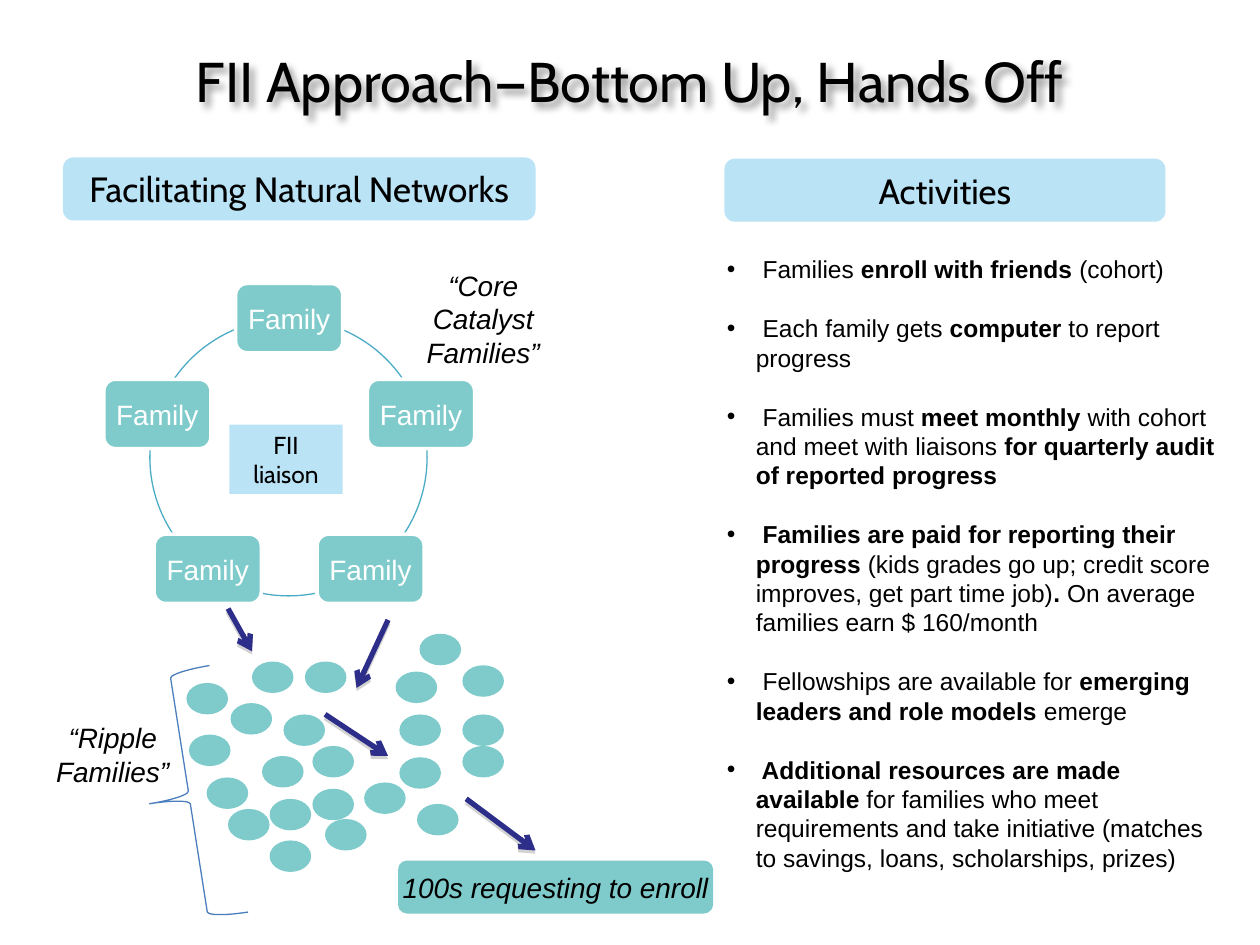
from lxml import etree
from math import cos, radians, sin
from pptx import Presentation
from pptx.dml.color import RGBColor
from pptx.enum.shapes import MSO_CONNECTOR, MSO_SHAPE
from pptx.enum.text import MSO_ANCHOR, PP_ALIGN
from pptx.oxml.ns import qn
from pptx.util import Inches, Pt

TEAL = RGBColor(0x00, 0x99, 0x99)
SKY = RGBColor(0x76, 0xC9, 0xEE)
RING_BLUE = RGBColor(0x4B, 0xAC, 0xC6)
BRACE_BLUE = RGBColor(0x4B, 0x7E, 0xBC)
NAVY = RGBColor(0x2D, 0x2D, 0x8A)
BLACK = RGBColor(0, 0, 0)
WHITE = RGBColor(0xFF, 0xFF, 0xFF)

prs = Presentation()
prs.slide_width, prs.slide_height = Inches(10), Inches(7.5)
slide = prs.slides.add_slide(prs.slide_layouts[5])
shapes = slide.shapes


def add_panel(kind, left, top, width, height, color, text="", size=16,
              font="Arial", font_color=BLACK, italic=False):
    """Half-transparent filled shape with centred text; no fill if color is None."""
    panel = shapes.add_shape(kind, Inches(left), Inches(top), Inches(width), Inches(height))
    panel.shadow.inherit = False
    panel.line.fill.background()
    if color is None:
        panel.fill.background()
    else:
        panel.fill.solid()
        panel.fill.fore_color.rgb = color
        srgb = panel.fill._xPr.find(qn("a:solidFill"))[0]
        etree.SubElement(srgb, qn("a:alpha"), val="50000")
    if text:
        frame = panel.text_frame
        frame.text = text
        frame.word_wrap = False
        frame.vertical_anchor = MSO_ANCHOR.MIDDLE
        for paragraph in frame.paragraphs:
            paragraph.alignment = PP_ALIGN.CENTER
            for run in paragraph.runs:
                run.font.size, run.font.name = Pt(size), font
                run.font.italic = italic
                run.font.color.rgb = font_color
    return panel


def add_shadow(shape, blur, distance, angle, opacity, color):
    effects = etree.SubElement(shape._element.spPr, qn("a:effectLst"))
    shadow = etree.SubElement(effects, qn("a:outerShdw"), blurRad=str(Pt(blur)),
                              dist=str(Pt(distance)), dir=str(angle * 60000), rotWithShape="0")
    srgb = etree.SubElement(shadow, qn("a:srgbClr"), val=color)
    etree.SubElement(srgb, qn("a:alpha"), val=str(opacity * 1000))


# Title
title = shapes.title
title.left, title.top, title.width, title.height = (
    Inches(0.5), Inches(0.31), Inches(9), Inches(0.66))
title.text_frame.text = "FII Approach—Bottom Up, Hands Off"
title.text_frame.vertical_anchor = MSO_ANCHOR.MIDDLE
heading = title.text_frame.paragraphs[0]
heading.alignment = PP_ALIGN.CENTER
heading.runs[0].font.size, heading.runs[0].font.name = Pt(32), "Cabin"
heading.runs[0].font.color.rgb = BLACK
add_shadow(title, 4, 3, 45, 40, "000000")

# Column headings
add_panel(MSO_SHAPE.ROUNDED_RECTANGLE, 0.5, 1.25, 3.75, 0.5, SKY,
          "Facilitating Natural Networks", 20, "Cabin")
add_panel(MSO_SHAPE.ROUNDED_RECTANGLE, 5.75, 1.26, 3.5, 0.5, SKY, "Activities", 20, "Cabin")

# Ring of families around the liaison
CENTER_X, CENTER_Y, RADIUS = 2.29, 3.63, 1.1
for start, end in [(293, 326), (357, 34), (79, 101), (146, 183), (214, 247)]:
    arc = add_panel(MSO_SHAPE.ARC, CENTER_X - RADIUS, CENTER_Y - RADIUS,
                    2 * RADIUS, 2 * RADIUS, None)
    arc.adjustments[0], arc.adjustments[1] = start * 0.6, end * 0.6
    arc.line.color.rgb, arc.line.width = RING_BLUE, Pt(0.75)

for step in range(5):
    angle = radians(72 * step - 90)
    family = add_panel(MSO_SHAPE.ROUNDED_RECTANGLE, CENTER_X + RADIUS * cos(angle) - 0.42,
                       CENTER_Y + RADIUS * sin(angle) - 0.28, 0.85, 0.55, TEAL,
                       "Family", font_color=WHITE)
    family.line.color.rgb, family.line.width = WHITE, Pt(2)

add_panel(MSO_SHAPE.RECTANGLE, 1.82, 3.37, 0.9, 0.55, SKY, "FII\nliaison", 14, "Cabin")

# Ripple families
ripples = [
    (2, 5.25), (2.42, 5.25), (1.48, 5.42), (1.83, 5.58), (2.25, 5.67), (1.5, 5.83),
    (2.08, 6), (2.48, 5.92), (1.64, 6.17), (1.81, 6.42), (2.14, 6.34), (2.14, 6.67),
    (2.48, 6.26), (2.58, 6.5), (2.89, 6.21), (3.31, 6.38), (3.17, 6.01), (3.17, 5.67),
    (3.14, 5.33), (3.33, 5.03), (3.67, 5.28), (3.67, 5.67), (3.67, 5.92),
]
for left, top in ripples:
    add_panel(MSO_SHAPE.OVAL, left, top, 0.33, 0.25, TEAL)

brace = add_panel(MSO_SHAPE.LEFT_BRACE, 1.18, 5.32, 0.64, 1.98, None)
brace.rotation = 351.1
brace.adjustments[0], brace.adjustments[1] = 0.08, 0.51
brace.line.color.rgb, brace.line.width = BRACE_BLUE, Pt(0.75)

add_panel(MSO_SHAPE.ROUNDED_RECTANGLE, 3.16, 6.83, 2.5, 0.42, TEAL,
          "100s requesting to enroll", italic=True)

# Arrows from families to ripples to enrollment
for x1, y1, x2, y2 in [(1.81, 4.83, 2, 5.17), (3.08, 4.92, 2.83, 5.46),
                       (2.58, 5.67, 3.08, 6), (3.7, 6.34, 4.25, 6.75)]:
    arrow = shapes.add_connector(MSO_CONNECTOR.STRAIGHT, Inches(x1), Inches(y1),
                                 Inches(x2), Inches(y2))
    arrow.line.color.rgb, arrow.line.width = NAVY, Pt(3)
    etree.SubElement(arrow.line._get_or_add_ln(), qn("a:tailEnd"), type="arrow")
    add_shadow(arrow, 0, 1.8, 90, 35, "808080")

# Group captions
for caption, left, top, height in [("“Ripple Families”", 0.31, 5.67, 0.64),
                                   ("“Core Catalyst Families”", 3.25, 2.08, 0.91)]:
    label = shapes.add_textbox(Inches(left), Inches(top), Inches(1.17), Inches(height))
    label.text_frame.word_wrap = True
    paragraph = label.text_frame.paragraphs[0]
    paragraph.text = caption
    paragraph.alignment = PP_ALIGN.CENTER
    font = paragraph.runs[0].font
    font.size, font.name, font.italic = Pt(16), "Arial", True
    font.color.rgb = BLACK

# Activities: each item is a list of (text, bold)
activities = [
    [(" Families ", False), ("enroll with friends ", True), ("(cohort)", False)],
    [(" Each family gets ", False), ("computer", True), (" to report progress", False)],
    [(" Families must ", False), ("meet monthly", True),
     (" with cohort and meet with liaisons ", False),
     ("for quarterly audit of reported progress", True)],
    [(" Families are paid for reporting their progress ", True),
     ("(kids grades go up; credit score improves, get part time job)", False),
     (". ", True), ("On average families earn $ 160/month", False)],
    [(" Fellowships are available for ", False),
     ("emerging leaders and role models ", True), ("emerge", False)],
    [(" Additional resources are made available ", True),
     ("for families who meet requirements and take initiative "
      "(matches to savings, loans, scholarships, prizes)", False)],
]
activity_list = shapes.add_textbox(Inches(5.67), Inches(1.97), Inches(4.08), Inches(5.28))
frame = activity_list.text_frame
frame.word_wrap = True
for index, parts in enumerate(activities):
    paragraph = frame.add_paragraph() if index else frame.paragraphs[0]
    if index:
        paragraph.space_before = Pt(16.8)
    properties = paragraph._p.get_or_add_pPr()
    properties.set("marL", str(Inches(0.23)))
    properties.set("indent", str(-Inches(0.23)))
    etree.SubElement(properties, qn("a:buFont"), typeface="Arial")
    etree.SubElement(properties, qn("a:buChar"), char="•")
    for text, bold in parts:
        run = paragraph.add_run()
        run.text = text
        run.font.size, run.font.name, run.font.bold = Pt(14), "Arial", bold
        run.font.color.rgb = BLACK

prs.save("out.pptx")
